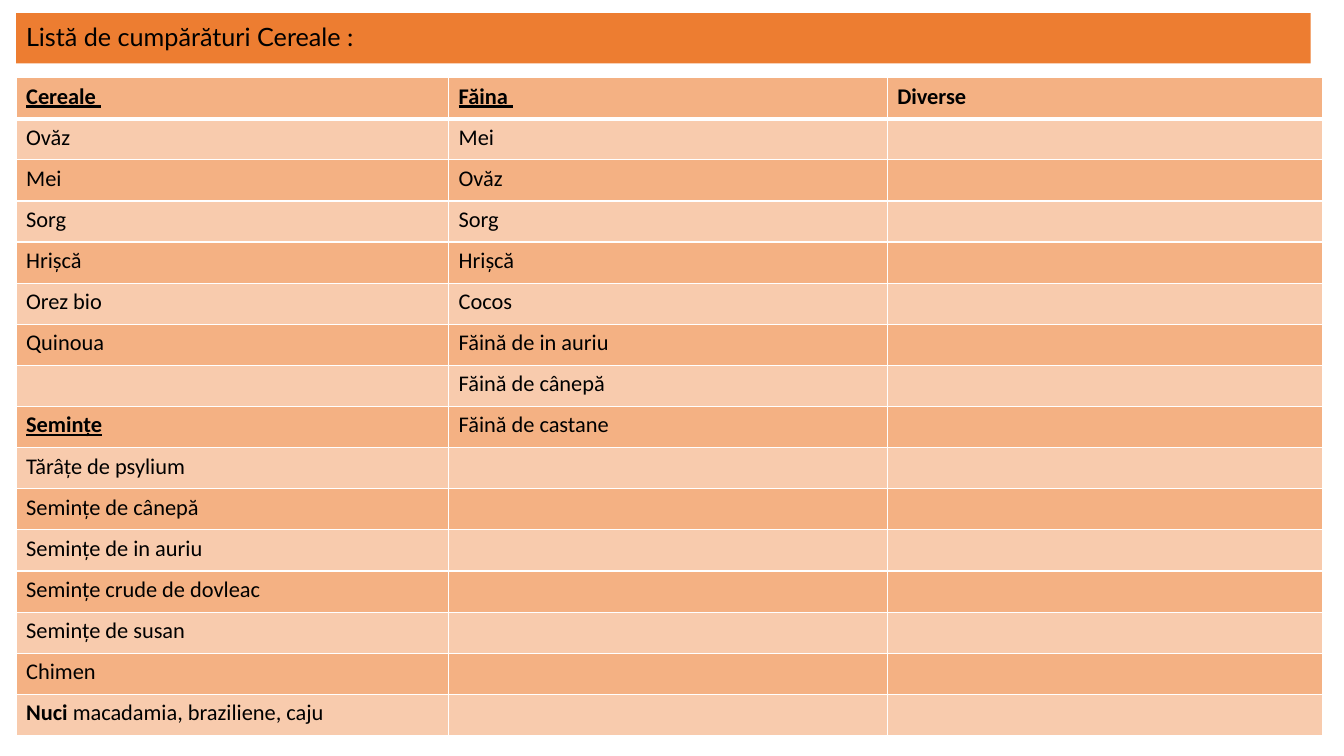
from itertools import zip_longest

from lxml import etree
from pptx import Presentation
from pptx.dml.color import RGBColor
from pptx.enum.shapes import MSO_SHAPE
from pptx.enum.text import MSO_ANCHOR, PP_ALIGN
from pptx.oxml.ns import qn
from pptx.util import Inches, Pt

RECTANGLE = MSO_SHAPE.RECTANGLE
MIDDLE = MSO_ANCHOR.MIDDLE
LEFT = PP_ALIGN.LEFT

# Content: each entry is a list of (text, style) spans
TITLE = "Listă de cumpărături Cereale :"
PLAIN, BOLD, HEADING = "plain", "bold", "heading"
CEREALS = [
    [("Cereale ", HEADING)],
    "Ovăz", "Mei", "Sorg", "Hrișcă", "Orez bio", "Quinoua", "",
    [("Semințe", HEADING)],
    "Tărâțe de psylium", "Semințe de cânepă", "Semințe de in auriu",
    "Semințe crude de dovleac", "Semințe de susan", "Chimen",
    [("Nuci ", BOLD), ("macadamia, braziliene, caju", PLAIN)],
]
FLOURS = [
    [("Făina ", HEADING)],
    "Mei", "Ovăz", "Sorg", "Hrișcă", "Cocos",
    "Făină de in auriu", "Făină de cânepă", "Făină de castane",
]
OTHERS = [[("Diverse", BOLD)]]
ROWS = list(zip_longest(CEREALS, FLOURS, OTHERS, fillvalue=""))

THEME = {
    "title_fill": "ED7D31", "bands": ("F4B183", "F8CBAD"),
    "border": "FFFFFF", "text": "000000",
    "title_font": "Lato", "table_font": "Calibri",
    "title_size": 18, "table_size": 16,
    "thin": 1, "thick": 3,
}

# Layout in inches
TITLE_BOX = (0.16, 0.13, 12.84, 0.5)
TABLE_LEFT, TABLE_TOP, TABLE_HEIGHT = 0.16, 0.77, 6.53
COLUMN_WIDTHS = (4.29, 4.35, 4.32)


def add_span(para, text, font_name, size, style=PLAIN):
    span = para.add_run()
    span.text = text
    span.font.name = font_name
    span.font.size = Pt(size)
    span.font.bold = style != PLAIN
    span.font.underline = style == HEADING
    span.font.color.rgb = RGBColor.from_string(THEME["text"])


def set_borders(cell, top, bottom):
    properties = cell._tc.get_or_add_tcPr()
    widths = {"lnL": THEME["thin"], "lnR": THEME["thin"], "lnT": top, "lnB": bottom}
    for side, width in widths.items():
        line = etree.SubElement(properties, qn("a:" + side), w=str(Pt(width)))
        fill = etree.SubElement(line, qn("a:solidFill"))
        etree.SubElement(fill, qn("a:srgbClr"), val=THEME["border"])


def add_title(page):
    box = page.shapes.add_shape(RECTANGLE, *map(Inches, TITLE_BOX))
    box.shadow.inherit = False
    box.fill.solid()
    box.fill.fore_color.rgb = RGBColor.from_string(THEME["title_fill"])
    box.line.fill.background()
    box.text_frame.word_wrap = True
    box.text_frame.vertical_anchor = MIDDLE
    para = box.text_frame.paragraphs[0]
    para.alignment = LEFT
    para.line_spacing = 0.9
    add_span(para, TITLE, THEME["title_font"], THEME["title_size"])


def add_shopping_table(page):
    table = page.shapes.add_table(
        len(ROWS), len(COLUMN_WIDTHS), Inches(TABLE_LEFT), Inches(TABLE_TOP),
        Inches(sum(COLUMN_WIDTHS)), Inches(TABLE_HEIGHT)).table
    for column, width in zip(table.columns, COLUMN_WIDTHS):
        column.width = Inches(width)
    for row_index, entries in enumerate(ROWS):
        table.rows[row_index].height = Inches(TABLE_HEIGHT / len(ROWS))
        # The header is set off by a thick rule
        top = THEME["thick"] if row_index == 1 else THEME["thin"]
        bottom = THEME["thick"] if row_index == 0 else THEME["thin"]
        for column_index, entry in enumerate(entries):
            cell = table.cell(row_index, column_index)
            set_borders(cell, top, bottom)
            cell.fill.solid()
            cell.fill.fore_color.rgb = RGBColor.from_string(THEME["bands"][row_index % 2])
            para = cell.text_frame.paragraphs[0]
            para.font.size = Pt(THEME["table_size"])
            spans = [(entry, PLAIN)] if isinstance(entry, str) else entry
            for text, style in spans:
                if text:
                    add_span(para, text, THEME["table_font"], THEME["table_size"], style)


def main():
    deck = Presentation()
    deck.slide_width, deck.slide_height = Inches(13.33), Inches(7.5)
    page = deck.slides.add_slide(deck.slide_layouts[6])
    add_title(page)
    add_shopping_table(page)
    deck.save("out.pptx")


if __name__ == "__main__":
    main()
